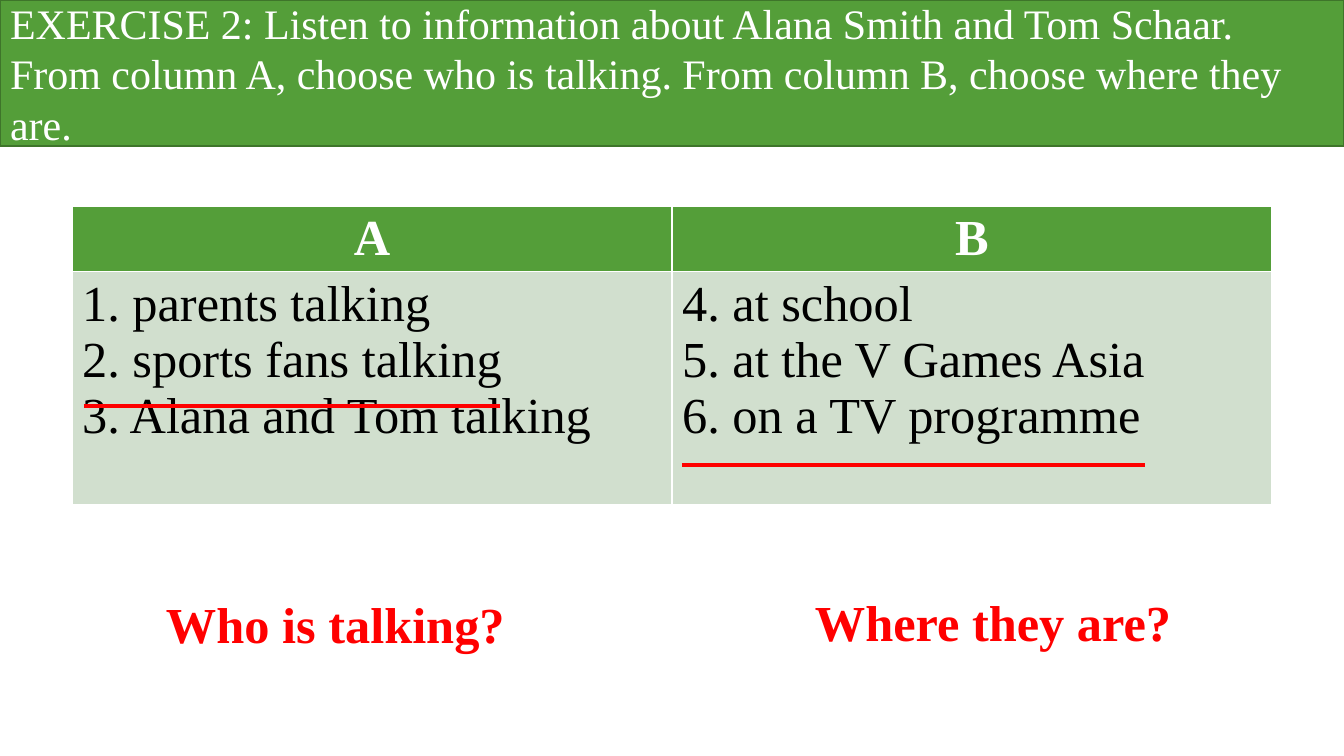
from lxml import etree
from pptx import Presentation
from pptx.dml.color import RGBColor
from pptx.enum.shapes import MSO_CONNECTOR
from pptx.enum.text import MSO_ANCHOR, MSO_AUTO_SIZE, PP_ALIGN
from pptx.oxml.ns import qn
from pptx.util import Pt

LEFT, CENTER = PP_ALIGN.LEFT, PP_ALIGN.CENTER
MIDDLE = MSO_ANCHOR.MIDDLE
NO_FIT, GROW = MSO_AUTO_SIZE.NONE, MSO_AUTO_SIZE.SHAPE_TO_FIT_TEXT
STRAIGHT = MSO_CONNECTOR.STRAIGHT

EMU_PER_PX = 914400 / 100.8
FONT = "Times New Roman"
COLORS = {
    "green": "549E39",
    "dark green": "3E752A",
    "pale green": "D1DFCE",
    "white": "FFFFFF",
    "black": "000000",
    "red": "FF0000",
}


def px(length):
    return round(length * EMU_PER_PX)


def color(name):
    return RGBColor.from_string(COLORS[name])


class ExerciseSlide:
    def __init__(self, presentation):
        self.slide = presentation.slides.add_slide(presentation.slide_layouts[5])
        self.shapes = self.slide.shapes

    def set_text(self, text_frame, text, size, text_color, bold=False, align=LEFT):
        text_frame.text = text
        for paragraph in text_frame.paragraphs:
            paragraph.alignment = align
            for run in paragraph.runs:
                run.font.name = FONT
                run.font.size = Pt(size)
                run.font.bold = bold
                run.font.color.rgb = color(text_color)

    def fill(self, target, name):
        target.fill.solid()
        target.fill.fore_color.rgb = color(name)

    def title(self, text, left, top, width, height):
        title = self.shapes.title
        title.left, title.top = px(left), px(top)
        title.width, title.height = px(width), px(height)
        self.fill(title, "green")
        title.line.color.rgb = color("dark green")
        title.line.width = Pt(1)
        title.text_frame.word_wrap = True
        title.text_frame.auto_size = NO_FIT
        title.text_frame.vertical_anchor = MIDDLE
        self.set_text(title.text_frame, text, 30, "white")

    def table(self, columns, left, top, column_width, row_heights):
        frame = self.shapes.add_table(
            2, len(columns), px(left), px(top),
            px(column_width * len(columns)), px(sum(row_heights)))
        table = frame.table
        table.horz_banding = False
        for row, height in zip(table.rows, row_heights):
            row.height = px(height)
        for index, (heading, choices) in enumerate(columns.items()):
            table.columns[index].width = px(column_width)
            header, body = table.cell(0, index), table.cell(1, index)
            self.fill(header, "green")
            self.set_text(header.text_frame, heading, 36, "white", True, CENTER)
            self.fill(body, "pale green")
            self.set_text(body.text_frame, "\n".join(choices), 36, "black")

    def question(self, text, left, top, width, height):
        box = self.shapes.add_textbox(px(left), px(top), px(width), px(height))
        box.text_frame.word_wrap = False
        box.text_frame.auto_size = GROW
        self.set_text(box.text_frame, text, 36, "red", bold=True)

    def underline(self, left, right, y):
        line = self.shapes.add_connector(STRAIGHT, px(left), px(y), px(right), px(y))
        line.line.color.rgb = color("red")
        line.line.width = Pt(3)
        etree.SubElement(line._element.spPr, qn("a:effectLst"))


def main():
    presentation = Presentation()
    presentation.slide_width, presentation.slide_height = px(1344), px(756)
    exercise = ExerciseSlide(presentation)

    # Instruction banner
    exercise.title(
        "EXERCISE 2: Listen to information about Alana Smith and Tom Schaar. "
        "From column A, choose who is talking. "
        "From column B, choose where they are.", 0, 0, 1344, 146)

    # Answer choices
    exercise.table({
        "A": ["1. parents talking", "2. sports fans talking",
              "3. Alana and Tom talking"],
        "B": ["4. at school", "5. at the V Games Asia",
              "6. on a TV programme"],
    }, 72, 206, 600, (65, 233))

    # Questions under the columns
    exercise.question("Who is talking?", 156, 588, 363, 72)
    exercise.question("Where they are?", 805, 586, 380, 72)

    # Marks for the correct answers
    exercise.underline(84, 500, 406)
    exercise.underline(682, 1145, 465)

    presentation.save("out.pptx")


if __name__ == "__main__":
    main()
